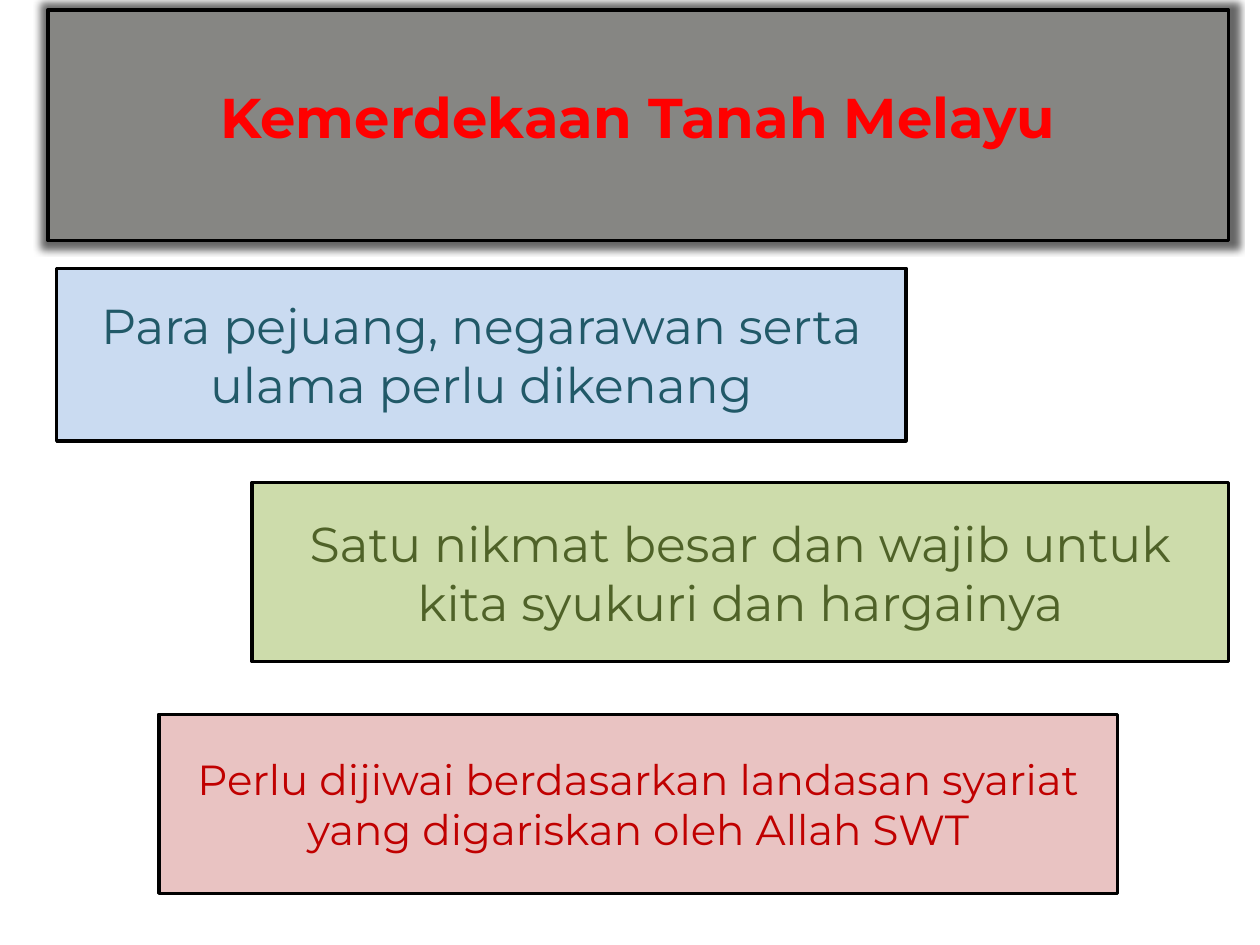
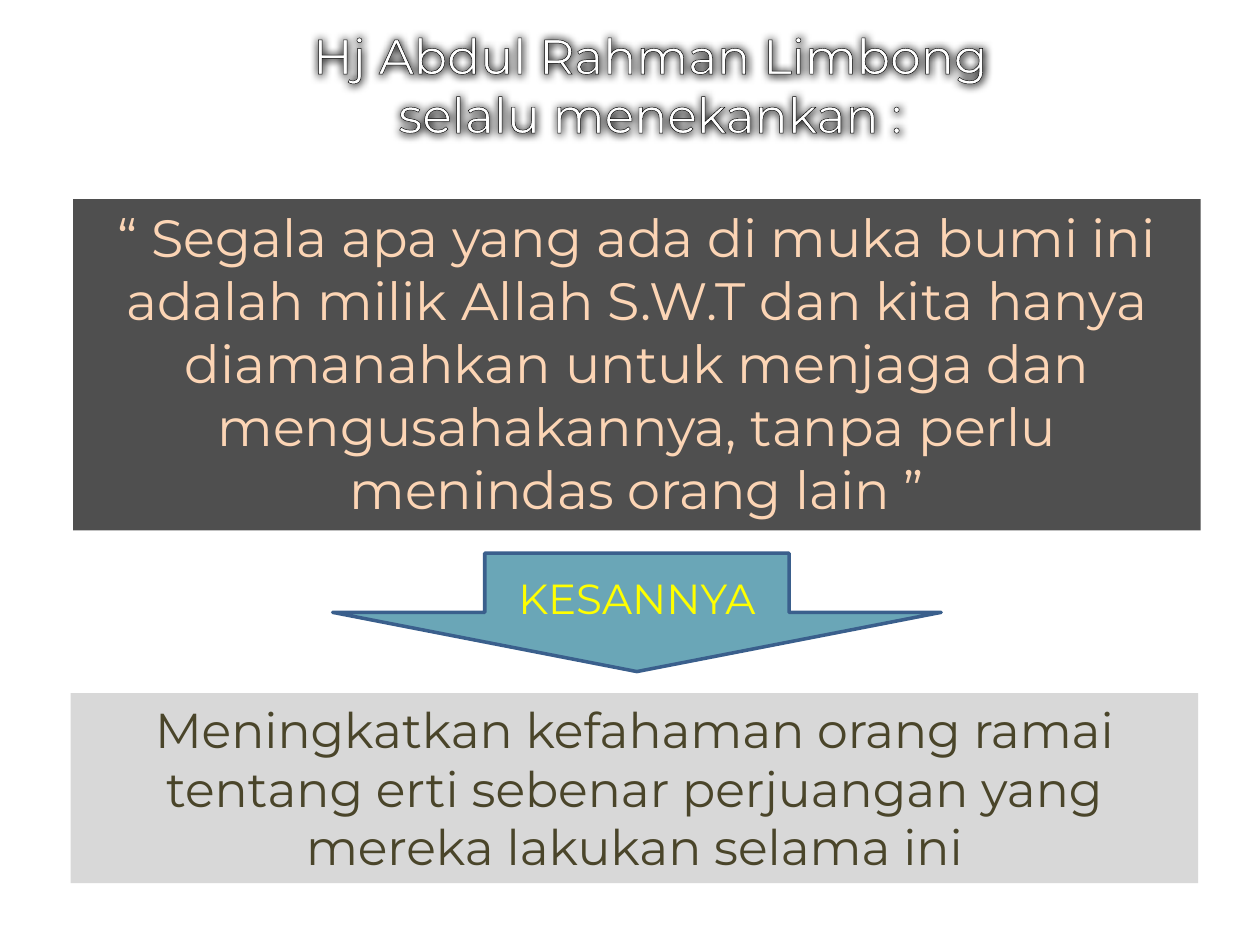
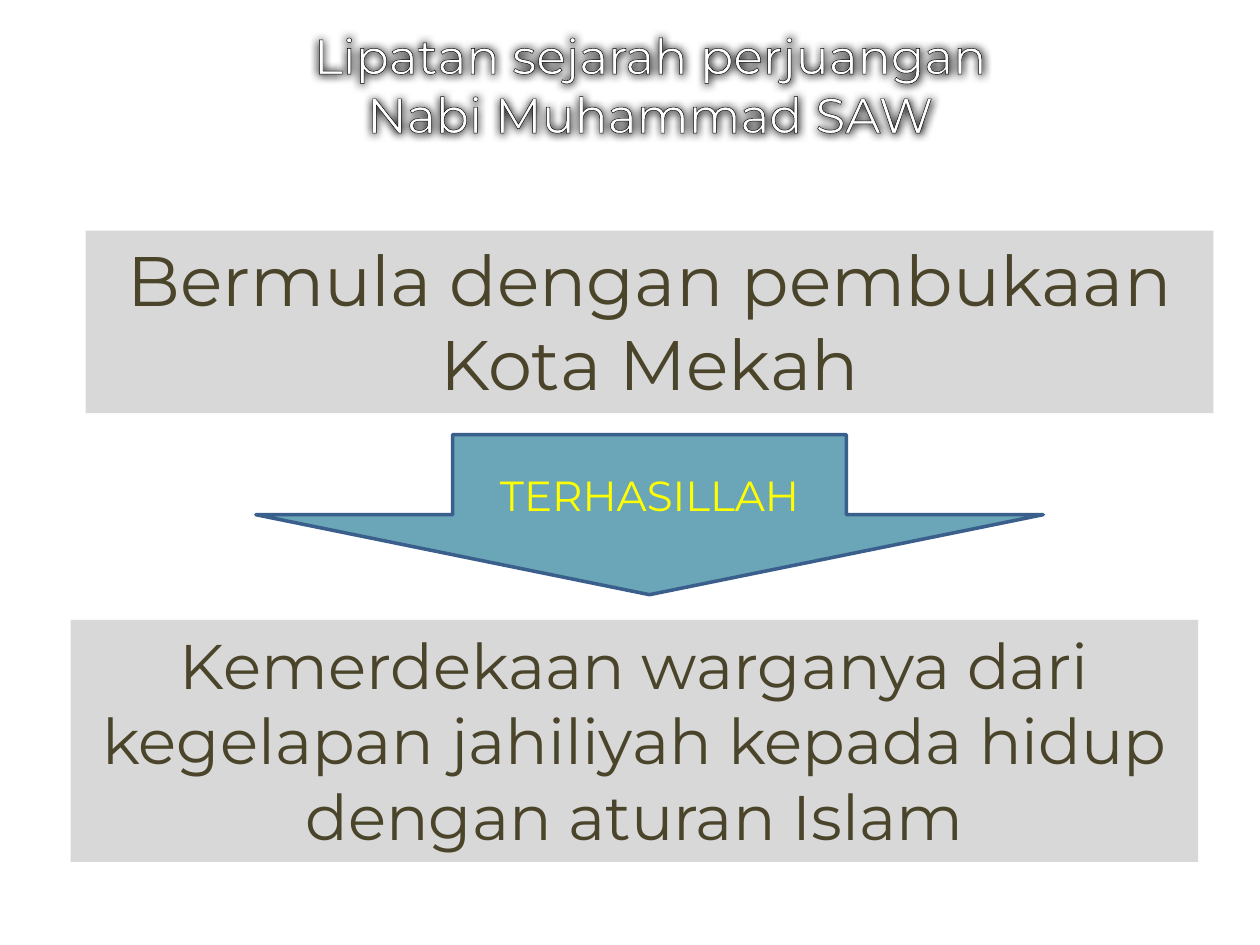
from lxml import etree
from pptx import Presentation
from pptx.dml.color import RGBColor
from pptx.enum.shapes import MSO_SHAPE as SHAPE
from pptx.enum.text import MSO_ANCHOR as ANCHOR, MSO_AUTO_SIZE as AUTO, PP_ALIGN as ALIGN
from pptx.oxml import parse_xml
from pptx.oxml.ns import nsdecls, qn
from pptx.util import Inches, Pt

FONT = "Montserrat"
BLACK, WHITE = "000000", "FFFFFF"

GLOW = ("glow", {"rad": Pt(8)}, 60)
SHADOW = ("outerShdw", {"blurRad": Pt(5), "dist": 0, "dir": 0, "algn": "ctr", "rotWithShape": 0}, 100)

BANNER = dict(fill="EEECE1", alpha=24, line=BLACK, size=32, color="FF0000", bold=True,
              outline=(WHITE, 1.4), effect=GLOW, geom=(57900, 85200), bottom=0.2)
TITLE = dict(size=28, color=WHITE, outline=(BLACK, 0.75), effect=SHADOW, wrap=False, anchor=ANCHOR.TOP)
CARD = dict(line=BLACK, size=28)
BLUE = dict(CARD, fill="C6D9F1", alpha=93, color="215968")
GREEN = dict(CARD, fill="C3D69B", alpha=83, color="4F6228")
PINK = dict(CARD, fill="E6B9B8", alpha=85, color="C00000", size=24)
PANEL = dict(fill="BFBFBF", alpha=60, color="4A452A", outline=(BLACK, 0.75), anchor=ANCHOR.TOP)
QUOTE = dict(PANEL, fill=BLACK, alpha=69, color="FCD5B5", size=30)
ARROW = dict(shape=SHAPE.DOWN_ARROW, fill="31859C", alpha=72, line="3A5F8C", size=24,
             color="FFFF00", outline=(BLACK, 0.75))

SLIDES = [
    (("Kemerdekaan Tanah Melayu", (0.38, 0.08, 9.37, 1.83), BANNER), [
        ("Para pejuang, negarawan serta ulama perlu dikenang", (0.45, 2.13, 6.74, 1.37), BLUE),
        ("Satu nikmat besar dan wajib untuk kita syukuri dan hargainya", (2, 3.83, 7.75, 1.42), GREEN),
        ("Perlu dijiwai berdasarkan landasan syariat yang digariskan oleh Allah SWT",
         (1.26, 5.67, 7.61, 1.42), PINK),
    ]),
    (("Hj Abdul Rahman Limbong\nselalu menekankan :", (2.17, 0.15, 5.98, 1.04), TITLE), [
        ("“ Segala apa yang ada di muka bumi ini adalah milik Allah S.W.T dan kita hanya "
         "diamanahkan untuk menjaga dan mengusahakannya, tanpa perlu menindas orang lain ”",
         (0.58, 1.58, 8.95, 2.63), QUOTE),
        ("KESANNYA", (2.64, 4.39, 4.83, 0.94), ARROW),
        ("Meningkatkan kefahaman orang ramai tentang erti sebenar perjuangan yang mereka "
         "lakukan selama ini", (0.56, 5.5, 8.95, 1.51), dict(PANEL, size=28)),
    ]),
    (("Lipatan sejarah perjuangan\nNabi Muhammad SAW", (2.12, 0.15, 6.08, 1.04), TITLE), [
        ("TERHASILLAH", (2.03, 3.45, 6.25, 1.27), ARROW),
        ("Bermula dengan pembukaan Kota Mekah", (0.68, 1.83, 8.95, 1.45), dict(PANEL, size=40)),
        ("Kemerdekaan warganya dari kegelapan jahiliyah kepada hidup dengan aturan Islam",
         (0.56, 4.92, 8.95, 1.92), dict(PANEL, size=36)),
    ]),
]


def rgb(value):
    return RGBColor.from_string(value)


def set_alpha(clr, percent):
    etree.SubElement(clr, qn("a:alpha"), val=str(percent * 1000))


def paint(sp, style):
    if "fill" in style:
        sp.fill.solid()
        sp.fill.fore_color.rgb = rgb(style["fill"])
        set_alpha(sp._element.spPr.find(qn("a:solidFill"))[0], style["alpha"])
    if "line" in style:
        sp.line.color.rgb = rgb(style["line"])
        sp.line.width = Pt(2)
    else:
        sp.line.fill.background()
    sp.shadow.inherit = False
    if "effect" in style:
        tag, attrs, alpha = style["effect"]
        effects = sp._element.spPr.find(qn("a:effectLst"))
        effect = etree.SubElement(effects, qn(f"a:{tag}"), {k: str(v) for k, v in attrs.items()})
        set_alpha(etree.SubElement(effect, qn("a:srgbClr"), val=BLACK), alpha)


def write(sp, text, style):
    tf = sp.text_frame
    frame = dict(auto_size=AUTO.NONE, word_wrap=style.get("wrap", True),
                 vertical_anchor=style.get("anchor", ANCHOR.MIDDLE),
                 margin_bottom=Inches(style.get("bottom", 0.05)))
    for name, value in frame.items():
        setattr(tf, name, value)
    tf.text = text
    for p in tf.paragraphs:
        p.alignment = ALIGN.CENTER
        for r in p.runs:
            for name, value in dict(name=FONT, size=Pt(style["size"]), bold=style.get("bold", False)).items():
                setattr(r.font, name, value)
            r.font.color.rgb = rgb(style["color"])
            if "outline" in style:
                color, width = style["outline"]
                r._r.get_or_add_rPr().insert(0, parse_xml(
                    f'<a:ln {nsdecls("a")} w="{Pt(width)}"><a:solidFill>'
                    f'<a:srgbClr val="{color}"/></a:solidFill></a:ln>'))


def add_title(s, text, box, style):
    sp = s.shapes.title
    sp.left, sp.top, sp.width, sp.height = map(Inches, box)
    if "geom" in style:
        head, shaft = style["geom"]
        sp._element.spPr.insert(1, parse_xml(
            f'<a:prstGeom {nsdecls("a")} prst="downArrow"><a:avLst>'
            f'<a:gd name="adj1" fmla="val {shaft}"/><a:gd name="adj2" fmla="val {head}"/>'
            '</a:avLst></a:prstGeom>'))
    paint(sp, style)
    write(sp, text, style)


def add_box(s, text, box, style):
    sp = s.shapes.add_shape(style.get("shape", SHAPE.RECTANGLE), *map(Inches, box))
    paint(sp, style)
    write(sp, text, style)


def main():
    prs = Presentation()
    prs.slide_width, prs.slide_height = Inches(10), Inches(7.5)
    for title, boxes in SLIDES:
        s = prs.slides.add_slide(prs.slide_layouts[5])
        add_title(s, *title)
        for box in boxes:
            add_box(s, *box)
    prs.save("out.pptx")


if __name__ == "__main__":
    main()
